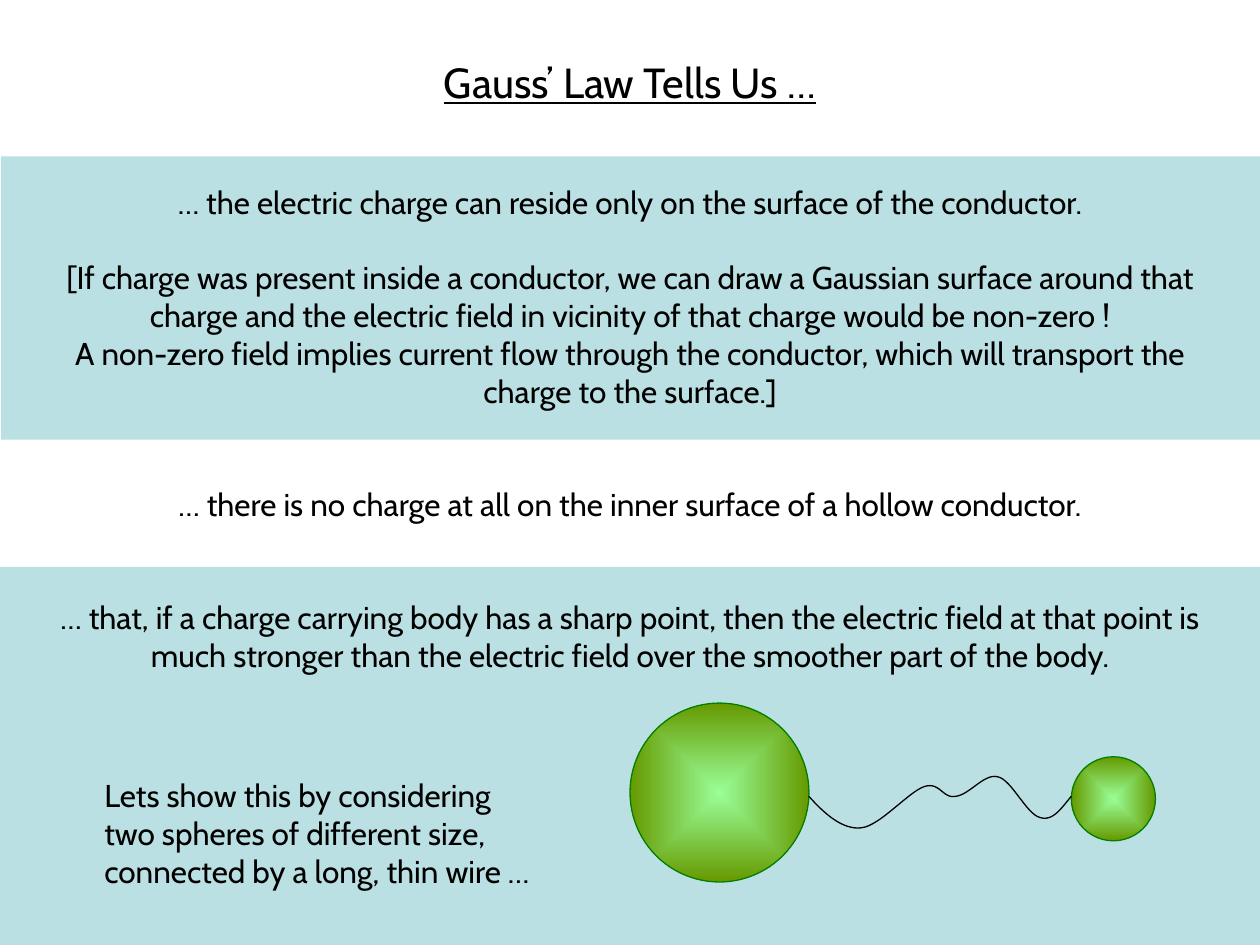
from lxml.etree import SubElement
from pptx import Presentation
from pptx.dml.color import RGBColor
from pptx.enum.shapes import MSO_SHAPE
from pptx.enum.text import MSO_ANCHOR, PP_ALIGN
from pptx.oxml.ns import qn
from pptx.util import Inches, Pt

COLORS = {"band": "BBE0E3", "text": "000000", "wire": "000000",
          "sphere_center": "99FF99", "sphere_edge": "669900", "sphere_line": "008000"}
FONT = "Cabin"
WIDTH, HEIGHT = 10, 7.5
MARGIN = 0.13
LINE = 0.3          # height of one 18 pt line
FIRST_LINE = 0.8    # top of the text grid, below the title

# (row on the text grid, paragraphs)
STATEMENTS = [
    (2, ["… the electric charge can reside only on the surface of the conductor."]),
    (4, ["[If charge was present inside a conductor, we can draw a Gaussian surface around "
         "that charge and the electric field in vicinity of that charge would be non-zero !",
         "A non-zero field implies current flow through the conductor, which will transport "
         "the charge to the surface.]"]),
    (10, ["… there is no charge at all on the inner surface of a hollow conductor."]),
    (13, ["… that, if a charge carrying body has a sharp point, then the electric field at "
          "that point is much stronger than the electric field over the smoother part of "
          "the body."]),
]

# Bezier segments of the wire, as shares of its box
WIRE_START = (0, 0.41)
WIRE_CURVES = [
    ((0.06, 0.72), (0.13, 1), (0.2, 0.96)),
    ((0.27, 0.93), (0.38, 0.33), (0.44, 0.24)),
    ((0.5, 0.15), (0.51, 0.46), (0.56, 0.41)),
    ((0.61, 0.39), (0.67, 0), (0.72, 0.07)),
    ((0.77, 0.11), (0.83, 0.72), (0.88, 0.78)),
    ((0.93, 0.85), (0.96, 0.63), (1, 0.41)),
]


def color(name):
    return RGBColor.from_string(COLORS[name])


def inches(box):
    return [Inches(length) for length in box]


def add_run(paragraph, text, size, underline=None):
    run = paragraph.add_run()
    run.text = text
    run.font.name = FONT
    run.font.size = Pt(size)
    run.font.underline = underline
    run.font.color.rgb = color("text")


def add_title(slide, box, text):
    title = slide.shapes.title
    title.left, title.top, title.width, title.height = inches(box)
    title.text_frame.vertical_anchor = MSO_ANCHOR.MIDDLE
    paragraph = title.text_frame.paragraphs[0]
    paragraph.alignment = PP_ALIGN.CENTER
    add_run(paragraph, text, 24, underline=True)


def add_band(slide, box):
    band = slide.shapes.add_shape(MSO_SHAPE.RECTANGLE, *inches(box))
    band.shadow.inherit = False
    band.fill.solid()
    band.fill.fore_color.rgb = color("band")
    band.line.fill.background()


def add_text(slide, box, texts, alignment):
    frame = slide.shapes.add_textbox(*inches(box)).text_frame
    frame.word_wrap = True
    for index, text in enumerate(texts):
        paragraph = frame.add_paragraph() if index else frame.paragraphs[0]
        paragraph.alignment = alignment
        add_run(paragraph, text, 18)


def add_statements(slide, box):
    left, top, width, _ = box
    for row, texts in STATEMENTS:
        add_text(slide, (left, top + row * LINE, width, 2 * LINE * len(texts) + 0.1),
                 texts, PP_ALIGN.CENTER)


def add_sphere(slide, left, top, diameter):
    sphere = slide.shapes.add_shape(
        MSO_SHAPE.OVAL, *inches((left, top, diameter, diameter)))
    sphere.shadow.inherit = False
    sphere.line.color.rgb = color("sphere_line")
    sphere.line.width = Pt(0.75)
    sphere.fill.gradient()
    stops = zip(sphere.fill.gradient_stops, (0, 1), ("sphere_center", "sphere_edge"))
    for stop, position, name in stops:
        stop.position = position
        stop.color.rgb = color(name)
    gradient = sphere.element.spPr.find(qn("a:gradFill"))
    gradient.remove(gradient.find(qn("a:lin")))
    center = SubElement(gradient, qn("a:path"), {"path": "shape"})
    SubElement(center, qn("a:fillToRect"), {side: "50000" for side in "ltrb"})


def curve_points(start, curves, steps=16):
    """Return points along a chain of cubic Bezier curves."""
    points = [start]
    for first, second, end in curves:
        for step in range(1, steps + 1):
            t = step / steps
            weights = ((1 - t) ** 3, 3 * t * (1 - t) ** 2, 3 * t ** 2 * (1 - t), t ** 3)
            corners = (start, first, second, end)
            points.append(tuple(
                sum(weight * corner[axis] for weight, corner in zip(weights, corners))
                for axis in (0, 1)))
        start = end
    return points


def add_wire(slide, box):
    left, top, width, height = box
    points = [(Inches(left + x * width), Inches(top + y * height))
              for x, y in curve_points(WIRE_START, WIRE_CURVES)]
    builder = slide.shapes.build_freeform(*points[0])
    builder.add_line_segments(points[1:], close=False)
    wire = builder.convert_to_shape()
    wire.shadow.inherit = False
    wire.fill.background()
    wire.line.color.rgb = color("wire")
    wire.line.width = Pt(0.75)


def add_connected_spheres(slide, box):
    left, top, width, height = box
    large, small = height, 0.47 * height
    add_sphere(slide, left, top, large)
    add_sphere(slide, left + width - small, top + 0.3 * height, small)
    add_wire(slide, (left + large, top + 0.39 * height,
                     width - large - small, 0.32 * height))


def main():
    presentation = Presentation()
    presentation.slide_width, presentation.slide_height = inches((WIDTH, HEIGHT))
    slide = presentation.slides.add_slide(presentation.slide_layouts[5])

    text_width = WIDTH - 2 * MARGIN
    add_title(slide, (MARGIN, 0.4, text_width, 0.5), "Gauss’ Law Tells Us …")
    add_band(slide, (0, 0.6 * HEIGHT, WIDTH, 0.4 * HEIGHT))
    add_band(slide, (0.01, 1.24, WIDTH, 0.3 * HEIGHT))
    add_statements(slide, (MARGIN, FIRST_LINE, text_width, HEIGHT - FIRST_LINE))
    add_connected_spheres(slide, (5, 5.58, 4.17, 1.42))
    add_text(slide, (0.73, 6.11, 4.1, 1),
             ["Lets show this by considering",
              "two spheres of different size, connected by a long, thin wire …"],
             PP_ALIGN.LEFT)

    presentation.save("out.pptx")


if __name__ == "__main__":
    main()
